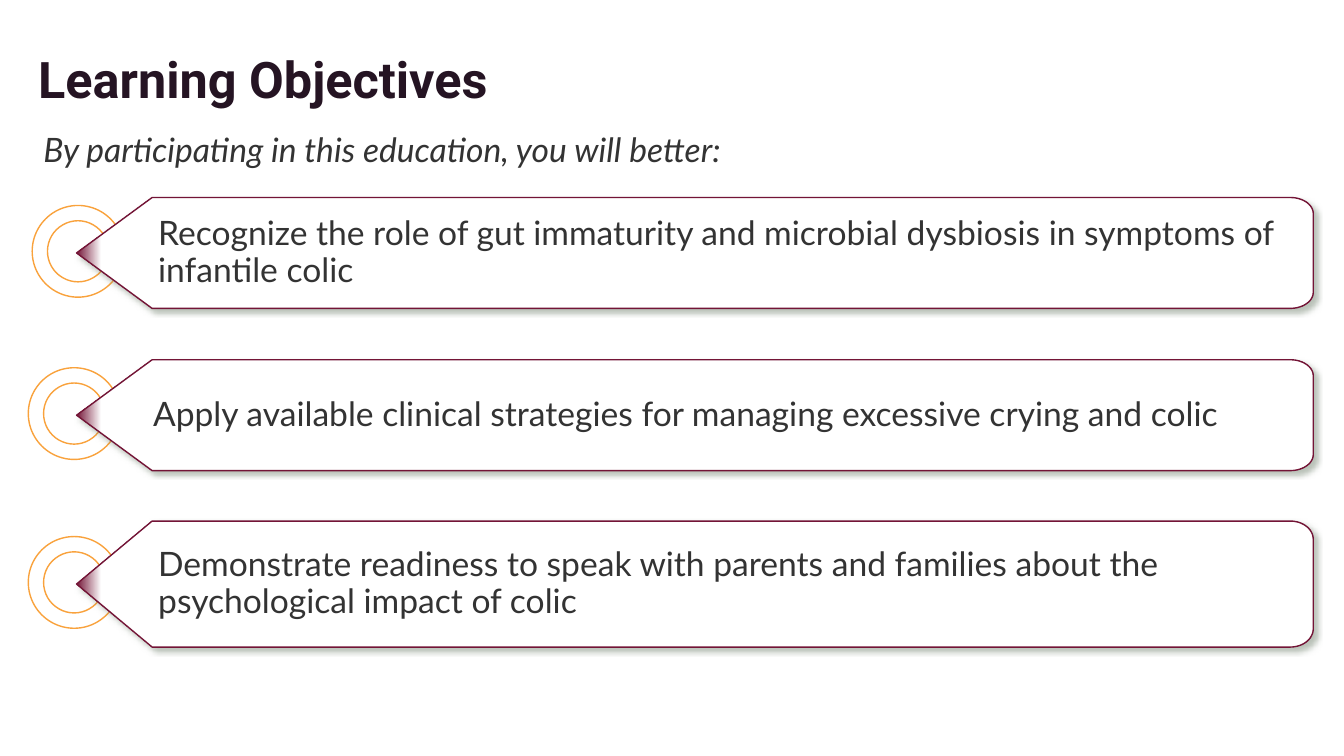
from math import cos, radians, sin

from lxml.etree import SubElement
from pptx import Presentation
from pptx.dml.color import RGBColor
from pptx.enum.shapes import MSO_SHAPE
from pptx.enum.text import MSO_ANCHOR, PP_ALIGN
from pptx.oxml.ns import qn
from pptx.util import Pt

WINE, ORANGE, WHITE = "731436", "F9A23C", "FFFFFF"
INK, DARK, SHADE = "333333", "251423", "758572"
BODY = {"name": "Lato", "size": Pt(24), "bold": False, "italic": False}
LEAD = {**BODY, "italic": True}
HEAD = {"name": "Roboto", "size": Pt(36), "bold": True}
RING = 65.5

# wording, tag top, tag height, ring left, text inset
GOALS = [
    ("Recognize the role of gut immaturity and microbial dysbiosis in "
     "symptoms of infantile colic", 141.1, 79.2, 23, 58.3),
    ("Apply available clinical strategies for managing excessive crying "
     "and colic", 257, 79.2, 20.2, 54.7),
    ("Demonstrate readiness to speak with parents and families about the "
     "psychological impact of colic", 372.2, 90, 20.2, 58.3),
]


def paint(color, tint):
    color.rgb = RGBColor.from_string(tint)


def assign(item, values):
    for key, value in values.items():
        setattr(item, key, value)


def write(frame, text, font, tint, pads, space=0.9):
    """Fill a text frame; pads are left, top, right, bottom."""
    sides = ("left", "top", "right", "bottom")
    assign(frame, {f"margin_{side}": Pt(pad) for side, pad in zip(sides, pads)})
    assign(frame, {"word_wrap": True, "vertical_anchor": MSO_ANCHOR.MIDDLE})
    para = frame.paragraphs[0]
    assign(para, {"alignment": PP_ALIGN.LEFT, "line_spacing": space})
    run = para.add_run()
    run.text = text
    assign(run.font, font)
    paint(run.font.color, tint)


def outline(shape, tint):
    shape.line.width = Pt(1)
    paint(shape.line.color, tint)
    shape.shadow.inherit = False


def add_alpha(color):
    SubElement(color, qn("a:alpha"), val="50000")


def add_title(slide, box):
    frame = slide.shapes.add_textbox(*map(Pt, box)).text_frame
    write(frame, "Learning Objectives", HEAD, DARK, (7.2, 3.6, 7.2, 3.6))


def add_lead(slide, box):
    table = slide.shapes.add_table(1, 1, *map(Pt, box)).table
    assign(table, {"first_row": False, "horz_banding": False})
    cell = table.cell(0, 0)
    cell.fill.background()
    write(cell.text_frame, "By participating in this education, you will better:",
          LEAD, INK, (0, 0, 0, 0), 1)
    assign(cell, {"margin_left": Pt(10.8), "margin_right": Pt(3.6),
                  "margin_top": Pt(3.6), "margin_bottom": Pt(3.6),
                  "vertical_anchor": MSO_ANCHOR.TOP})


def add_ring(slide, box):
    ring = slide.shapes.add_shape(MSO_SHAPE.DONUT, *map(Pt, box))
    ring.adjustments[0] = 0.167
    ring.fill.solid()
    paint(ring.fill.fore_color, WHITE)
    add_alpha(ring.fill._xPr.find(".//" + qn("a:srgbClr")))
    outline(ring, ORANGE)


def add_tag(slide, box, text, inset):
    """Draw a box with a pointed left end and rounded right corners."""
    x, y, w, h = box
    rx, ry, neck = 16.4, 0.145 * h, 54

    def arc(mid, start):
        turns = [radians(start + step) for step in range(0, 91, 6)]
        return [(x + w - rx + rx * cos(t), mid + ry * sin(t)) for t in turns]

    dots = [(x + neck, y), *arc(y + ry, -90), *arc(y + h - ry, 0),
            (x + neck, y + h)]
    pen = slide.shapes.build_freeform(Pt(x), Pt(y + h / 2))
    pen.add_line_segments([(Pt(a), Pt(b)) for a, b in dots])
    tag = pen.convert_to_shape()
    tag.fill.gradient()
    tag.fill.gradient_angle = 0
    for stop, place, tint in zip(tag.fill.gradient_stops, (0, 0.02), (WINE, WHITE)):
        stop.position = place
        paint(stop.color, tint)
    outline(tag, WINE)
    glow = SubElement(tag._element.spPr.find(qn("a:effectLst")),
                      qn("a:outerShdw"), blurRad=str(Pt(4)), dist=str(Pt(3)),
                      dir="2700000", algn="tl", rotWithShape="0")
    add_alpha(SubElement(glow, qn("a:srgbClr"), val=SHADE))
    write(tag.text_frame, text, BODY, INK, (inset, 5.8, 10, 5.8))


def add_goal(slide, box, text, left, inset):
    mid = box[1] + box[3] / 2
    add_ring(slide, (left, mid - RING / 2 - 1.2, RING, RING))
    add_tag(slide, box, text, inset)


def main():
    deck = Presentation()
    assign(deck, {"slide_width": Pt(960), "slide_height": Pt(540)})
    slide = deck.slides.add_slide(deck.slide_layouts[6])
    add_title(slide, (20.2, 13.7, 920, 90))
    add_lead(slide, (20.2, 88.6, 906.5, 36))
    for text, top, high, left, inset in GOALS:
        add_goal(slide, (54.7, top, 883.4, high), text, left, inset)
    deck.save("out.pptx")


if __name__ == "__main__":
    main()
